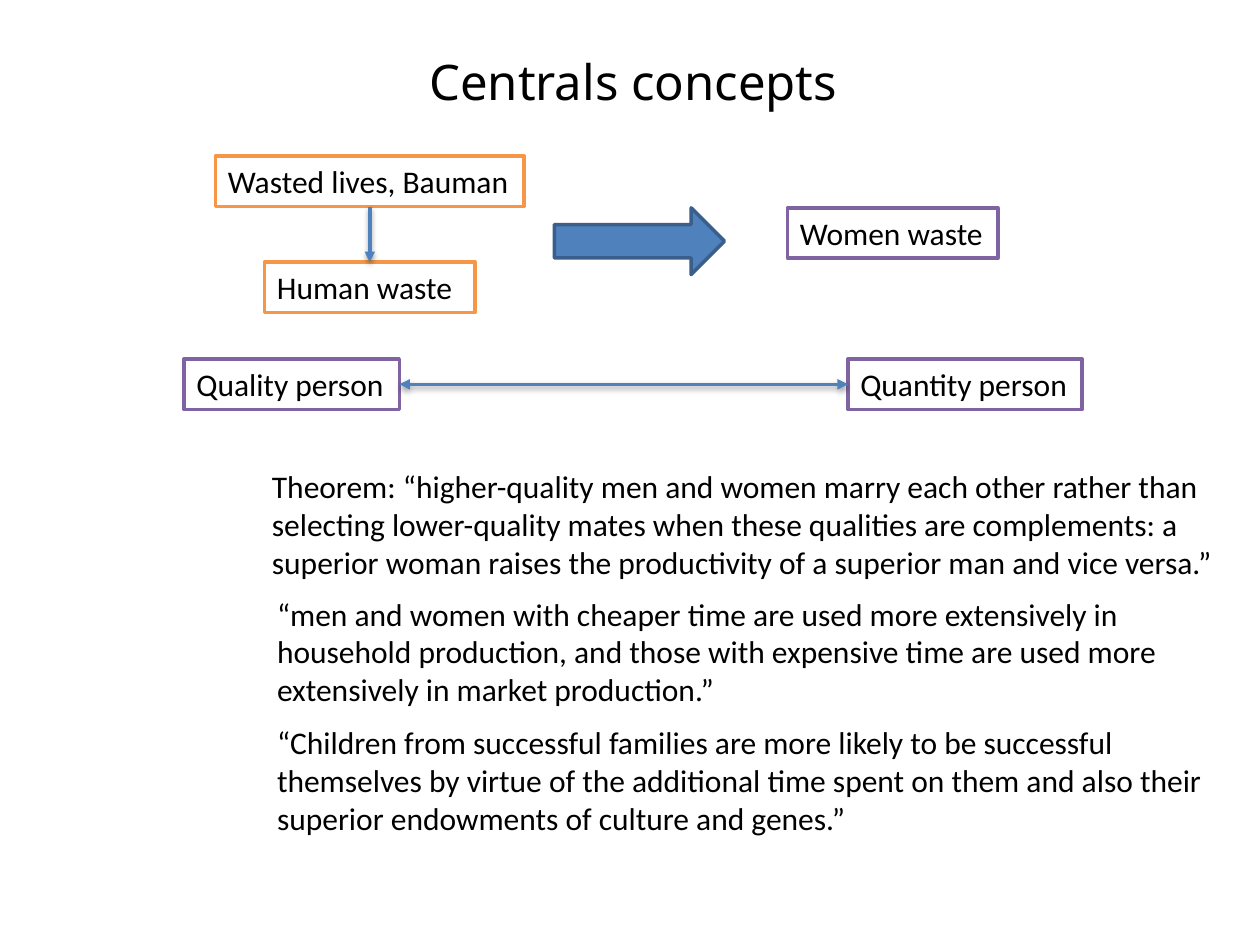
from dataclasses import dataclass

import pptx
import pptx.dml.color
import pptx.enum.shapes
import pptx.enum.text
import pptx.oxml
import pptx.oxml.ns
import pptx.util
from pptx.util import Inches

ORANGE, PURPLE, BLUE, NAVY = "F79646", "8064A2", "4F81BD", "3A5F8C"
SHAPE = pptx.enum.shapes.MSO_SHAPE
ALIGN = pptx.enum.text.PP_ALIGN
TOP, LEFT, BOTTOM, RIGHT = range(4)


@dataclass
class Concept:
    text: str
    x: float
    y: float
    w: float
    line: str
    h: float = 0.4


@dataclass
class Quote:
    text: str
    x: float
    y: float
    w: float
    h: float = 1.01


CONCEPTS = [
    Concept("Wasted lives, Bauman", 1.71, 1.24, 2.45, ORANGE),
    Concept("Human waste", 2.1, 2.08, 1.67, ORANGE),
    Concept("Women waste", 6.25, 1.65, 1.67, PURPLE),
    Concept("Quality person", 1.46, 2.85, 1.71, PURPLE),
    Concept("Quantity person", 6.73, 2.85, 1.86, PURPLE),
]
QUOTES = [
    Quote("Theorem: “higher-quality men and women marry each other rather than "
          "selecting lower-quality mates when these qualities are complements: a "
          "superior woman raises the productivity of a superior man and vice versa.”",
          2.06, 3.66, 7.94),
    Quote("“men and women with cheaper time are used more extensively in household "
          "production, and those with expensive time are used more extensively in "
          "market production.”", 2.1, 4.67, 7.52),
    Quote("“Children from successful families are more likely to be successful "
          "themselves by virtue of the additional time spent on them and also their "
          "superior endowments of culture and genes.”", 2.1, 5.69, 7.52),
]


def rgb(value: str) -> pptx.dml.color.RGBColor:
    return pptx.dml.color.RGBColor.from_string(value)


def write(sp, text: str, size: float = 18, font: str = "Calibri", align=ALIGN.LEFT) -> None:
    tf = sp.text_frame
    tf.word_wrap = True
    tf.margin_right = Inches(0.05)
    tf.vertical_anchor = pptx.enum.text.MSO_ANCHOR.TOP
    p = tf.paragraphs[0]
    p.alignment = align
    r = p.add_run()
    r.text = text
    r.font.size = pptx.util.Pt(size)
    r.font.name = font
    r.font.color.rgb = rgb("000000")


def add_shape(s, kind, x: float, y: float, w: float, h: float, fill: str, line: str):
    sp = s.shapes.add_shape(kind, Inches(x), Inches(y), Inches(w), Inches(h))
    sp.shadow.inherit = False
    sp.fill.solid()
    sp.fill.fore_color.rgb = rgb(fill)
    sp.line.color.rgb = rgb(line)
    sp.line.width = pptx.util.Pt(2)
    return sp


def add_text(s, x: float, y: float, w: float, h: float):
    return s.shapes.add_textbox(Inches(x), Inches(y), Inches(w), Inches(h))


def connect(s, start, start_side: int, end, end_side: int, heads: tuple[str, ...]) -> None:
    """Join two boxes with a softly shadowed line; heads names the arrow ends."""
    cx = s.shapes.add_connector(pptx.enum.shapes.MSO_CONNECTOR.STRAIGHT, 0, 0, 0, 0)
    cx.begin_connect(start, start_side)
    cx.end_connect(end, end_side)
    cx.line.color.rgb = rgb(BLUE)
    cx.line.width = pptx.util.Pt(2)
    ln = cx.line._get_or_add_ln()
    for head in heads:
        ln.append(pptx.oxml.parse_xml(
            f'<a:{head} {pptx.oxml.ns.nsdecls("a")} type="triangle"/>'))
    cx._element.spPr.append(pptx.oxml.parse_xml(
        f'<a:effectLst {pptx.oxml.ns.nsdecls("a")}>'
        '<a:outerShdw blurRad="40000" dist="20000" dir="5400000" rotWithShape="0">'
        '<a:srgbClr val="000000"><a:alpha val="38000"/></a:srgbClr>'
        '</a:outerShdw></a:effectLst>'))


def main() -> None:
    prs = pptx.Presentation()
    prs.slide_width, prs.slide_height = Inches(10), Inches(7.5)
    s = prs.slides.add_slide(prs.slide_layouts[6])

    title = add_text(s, 3.2, 0.36, 3.6, 0.57)
    write(title, "Centrals concepts", 28, "Noto Sans", ALIGN.CENTER)

    boxes = []
    for c in CONCEPTS:
        sp = add_shape(s, SHAPE.RECTANGLE, c.x, c.y, c.w, c.h, "FFFFFF", c.line)
        write(sp, c.text)
        boxes.append(sp)
    wasted, human, _, quality, quantity = boxes

    connect(s, wasted, BOTTOM, human, TOP, ("tailEnd",))
    add_shape(s, SHAPE.RIGHT_ARROW, 4.4, 1.65, 1.35, 0.53, BLUE, NAVY)
    for q in QUOTES:
        write(add_text(s, q.x, q.y, q.w, q.h), q.text)
    connect(s, quality, RIGHT, quantity, LEFT, ("headEnd", "tailEnd"))

    prs.save("out.pptx")


if __name__ == "__main__":
    main()
